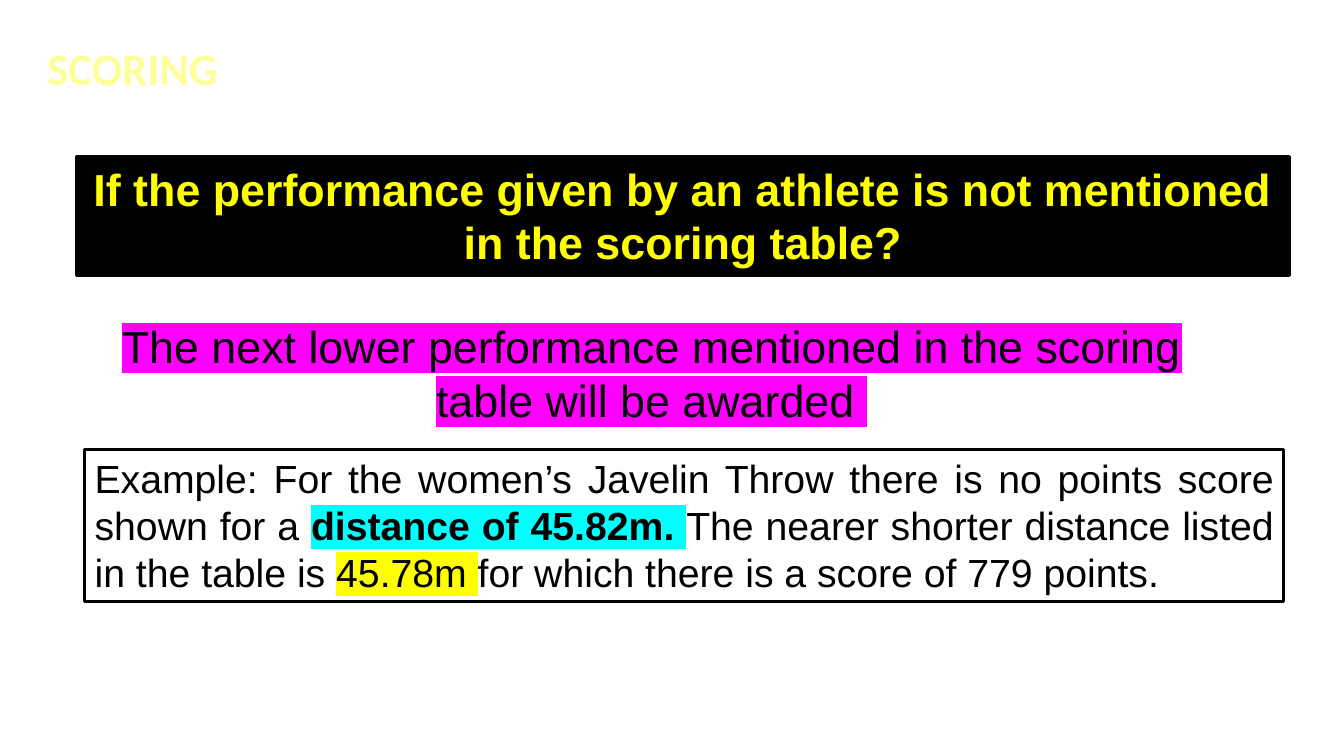
from dataclasses import dataclass

from lxml.etree import SubElement
from pptx import Presentation
from pptx.dml.color import RGBColor
from pptx.enum.shapes import MSO_SHAPE
from pptx.enum.text import MSO_ANCHOR, PP_ALIGN
from pptx.oxml import parse_xml
from pptx.oxml.ns import qn
from pptx.slide import Slide
from pptx.text.text import _Run
from pptx.util import Emu, Pt

PX = 9144  # 100 px to the inch
DRAWING_NS = "http://schemas.openxmlformats.org/drawingml/2006/main"
TITLE_SHADOW = (
    f'<a:effectLst xmlns:a="{DRAWING_NS}">'
    '<a:outerShdw blurRad="38100" dist="38100" dir="2700000" algn="tl">'
    '<a:srgbClr val="000000"><a:alpha val="43000"/></a:srgbClr>'
    '</a:outerShdw></a:effectLst>'
)


@dataclass(frozen=True)
class Span:
    text: str
    bold: bool = False
    highlight: str = ""


@dataclass(frozen=True)
class Panel:
    left: int
    top: int
    width: int
    height: int
    spans: tuple[Span, ...]
    size: int = 32
    font: str = "Arial"
    color: str = "000000"
    align: PP_ALIGN = PP_ALIGN.CENTER
    fill: str = ""
    border: float = 0
    shadow: bool = False


PANELS = (
    # Question
    Panel(76, 155, 1203, 118,
          (Span("If the performance given by an athlete is not mentioned "
                "in the scoring table?", bold=True),),
          color="FFFF00", fill="000000", border=2),
    # Answer
    Panel(60, 311, 1173, 118,
          (Span("The next lower performance mentioned in the scoring "
                "table will be awarded ", highlight="FF00FF"),)),
    # Worked example
    Panel(84, 446, 1189, 151,
          (Span("Example: For the women’s Javelin Throw there is no points "
                "score shown for a "),
           Span("distance of 45.82m. ", bold=True, highlight="00FFFF"),
           Span("The nearer shorter distance listed in the table is "),
           Span("45.78m ", highlight="FFFF00"),
           Span("for which there is a score of 779 points. ")),
          size=28, align=PP_ALIGN.JUSTIFY, border=2.25),
    # Title
    Panel(37, 35, 701, 64, (Span("SCORING", bold=True),),
          font="Calibri", color="FFFF99", align=PP_ALIGN.LEFT, shadow=True),
)


def rgb(value: str) -> RGBColor:
    return RGBColor.from_string(value)


def format_run(r: _Run, span: Span, panel: Panel) -> None:
    formats = {"size": Pt(panel.size), "name": panel.font, "bold": span.bold}
    for name, value in formats.items():
        setattr(r.font, name, value)
    r.font.color.rgb = rgb(panel.color)
    # Effects and highlight follow the text fill
    text_fill = r.font._element.find(qn("a:solidFill"))
    if span.highlight:
        highlight = parse_xml(f'<a:highlight xmlns:a="{DRAWING_NS}"/>')
        SubElement(highlight, qn("a:srgbClr"), val=span.highlight)
        text_fill.addnext(highlight)
    if panel.shadow:
        text_fill.addnext(parse_xml(TITLE_SHADOW))


def draw_panel(s: Slide, panel: Panel) -> None:
    box = [Emu(n * PX) for n in
           (panel.left, panel.top, panel.width, panel.height)]
    if panel.border:
        sp = s.shapes.add_shape(MSO_SHAPE.RECTANGLE, *box)
        sp.shadow.inherit = False
        sp.line.color.rgb = rgb("000000")
        sp.line.width = Pt(panel.border)
        if panel.fill:
            sp.fill.solid()
            sp.fill.fore_color.rgb = rgb(panel.fill)
        else:
            sp.fill.background()
    else:
        sp = s.shapes.add_textbox(*box)
    tf = sp.text_frame
    tf.word_wrap = True
    tf.vertical_anchor = MSO_ANCHOR.TOP
    p = tf.paragraphs[0]
    p.alignment = panel.align
    for span in panel.spans:
        r = p.add_run()
        r.text = span.text
        format_run(r, span, panel)


def main() -> None:
    prs = Presentation()
    prs.slide_width, prs.slide_height = Emu(1333 * PX), Emu(750 * PX)
    s = prs.slides.add_slide(prs.slide_layouts[6])
    for panel in PANELS:
        draw_panel(s, panel)
    prs.save("out.pptx")


if __name__ == "__main__":
    main()
